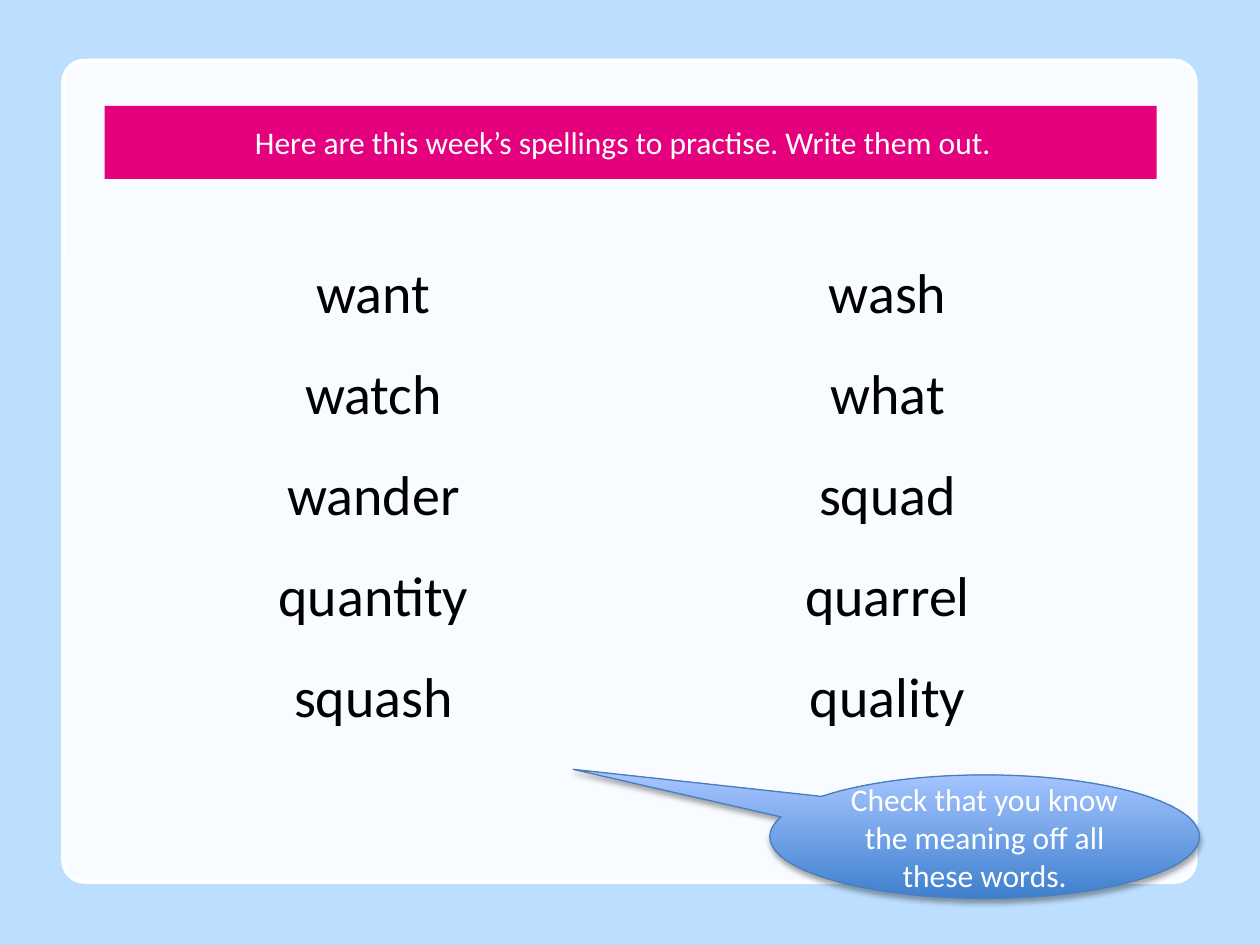
import pptx
import pptx.dml.color
import pptx.enum.shapes
import pptx.enum.text
import pptx.oxml
import pptx.oxml.ns
import pptx.util
from dataclasses import dataclass
from lxml import etree

INSTRUCTION = "Here are this week’s spellings to practise. Write them out."
SPELLINGS = [
    ["want", "watch", "wander", "quantity", "squash"],
    ["wash", "what", "squad", "quarrel", "quality"],
]
REMINDER = "Check that you know the meaning off all these words."


@dataclass(frozen=True)
class Theme:
    background: str = "BDDFFF"
    panel: str = "FFFFFF"
    banner: str = "E5007E"
    light_text: str = "FFFFFF"
    word: str = "000000"
    bubble_bottom: str = "3F80CE"
    bubble_top: str = "A4C4FF"
    bubble_line: str = "4B7EBC"
    font: str = "Calibri"
    body_size: int = 18
    word_size: int = 32


THEME = Theme()
inches = pptx.util.Inches
SHAPES = pptx.enum.shapes.MSO_SHAPE
ANCHOR = pptx.enum.text.MSO_ANCHOR

WIDTH, HEIGHT = 10, 7.5
FIRST_COLUMN, COLUMN_STEP, COLUMN_WIDTH = 2.03, 4.08, 1.87
WORDS_TOP, WORDS_HEIGHT = 1.7, 4.2


def rgb(code):
    return pptx.dml.color.RGBColor.from_string(code)


def box(left, top, width, height):
    return [inches(length) for length in (left, top, width, height)]


def drawing_child(parent, tag, **attributes):
    return etree.SubElement(parent, pptx.oxml.ns.qn("a:" + tag), attributes)


def write(shape, text, *, size=THEME.body_size, color=THEME.light_text,
          spacing=None, anchor=ANCHOR.MIDDLE, margins=(0.1, 0.05, 0.1, 0.05)):
    """Fill a shape with centred text, one paragraph per line of text."""
    frame = shape.text_frame
    frame.text = text
    frame.word_wrap = True
    frame.auto_size = pptx.enum.text.MSO_AUTO_SIZE.NONE
    frame.vertical_anchor = anchor
    (frame.margin_left, frame.margin_top,
     frame.margin_right, frame.margin_bottom) = map(inches, margins)
    for paragraph in frame.paragraphs:
        paragraph.alignment = pptx.enum.text.PP_ALIGN.CENTER
        paragraph.line_spacing = spacing
        font = paragraph.runs[0].font
        font.name, font.size = THEME.font, pptx.util.Pt(size)
        font.color.rgb = rgb(color)


def add_panel(slide):
    panel = slide.shapes.add_shape(SHAPES.ROUNDED_RECTANGLE, *box(0.5, 0.48, 8.99, 6.52))
    panel.adjustments[0] = 0.026
    panel.shadow.inherit = False
    panel.fill.solid()
    panel.fill.fore_color.rgb = rgb(THEME.panel)
    fill_color = panel.element.spPr.find(".//" + pptx.oxml.ns.qn("a:srgbClr"))
    drawing_child(fill_color, "alpha", val="90000")
    panel.line.color.rgb = rgb(THEME.panel)
    panel.line.width = pptx.util.Pt(2)


def add_banner(slide):
    banner = slide.shapes.title
    slide.shapes.element.append(banner.element)  # bring in front of the panel
    banner.left, banner.top, banner.width, banner.height = box(0.83, 0.84, 8.35, 0.58)
    banner.fill.solid()
    banner.fill.fore_color.rgb = rgb(THEME.banner)
    write(banner, INSTRUCTION, margins=(0.1, 0.05, 0.22, 0.05))


def add_spellings(slide):
    for column, words in enumerate(SPELLINGS):
        left = FIRST_COLUMN + column * COLUMN_STEP
        word_list = slide.shapes.add_textbox(
            *box(left, WORDS_TOP, COLUMN_WIDTH, WORDS_HEIGHT))
        write(word_list, "\n".join(words), size=THEME.word_size, color=THEME.word,
              spacing=1.5, anchor=ANCHOR.TOP, margins=(0, 0.08, 0, 0.08))


def add_reminder(slide):
    bubble = slide.shapes.add_shape(SHAPES.OVAL_CALLOUT, *box(6.11, 6.15, 3.41, 0.98))
    bubble.adjustments[0], bubble.adjustments[1] = -0.958, -0.545
    bubble.fill.gradient()
    bubble.fill.gradient_angle = 90
    stops = zip(bubble.fill.gradient_stops, (0, 1), (THEME.bubble_bottom, THEME.bubble_top))
    for stop, position, color in stops:
        stop.position = position
        stop.color.rgb = rgb(color)
    bubble.line.color.rgb = rgb(THEME.bubble_line)
    bubble.line.width = pptx.util.Pt(0.75)
    bubble.shadow.inherit = False
    effects = bubble.element.spPr.find(pptx.oxml.ns.qn("a:effectLst"))
    shadow = drawing_child(effects, "outerShdw", blurRad="40000", dist="23000",
                           dir="5400000", rotWithShape="0")
    shadow_color = drawing_child(shadow, "srgbClr", val="000000")
    drawing_child(shadow_color, "alpha", val="35000")
    write(bubble, REMINDER)


def main():
    deck = pptx.Presentation()
    deck.slide_width, deck.slide_height = inches(WIDTH), inches(HEIGHT)
    slide = deck.slides.add_slide(deck.slide_layouts.get_by_name("Title Only"))
    slide.background.fill.solid()
    slide.background.fill.fore_color.rgb = rgb(THEME.background)
    add_panel(slide)
    add_banner(slide)
    add_spellings(slide)
    add_reminder(slide)
    deck.save("out.pptx")


if __name__ == "__main__":
    main()
